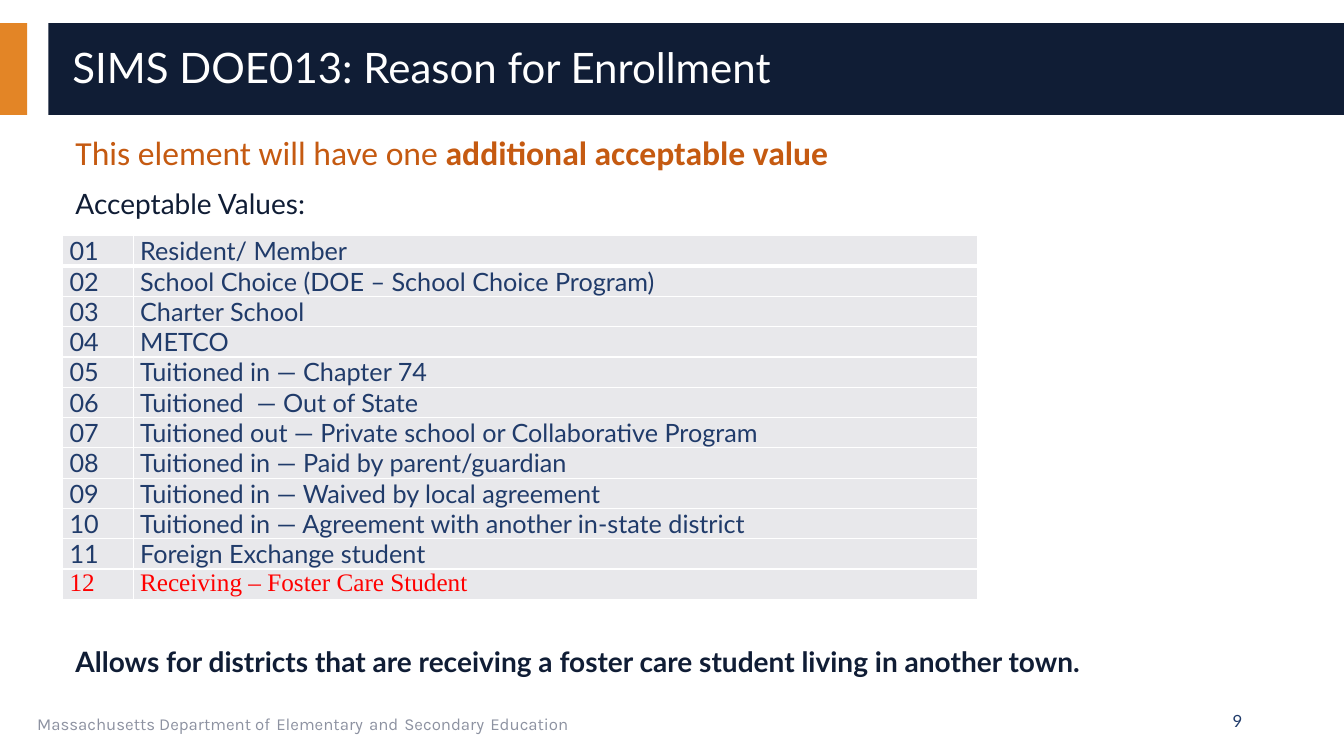
from dataclasses import dataclass

from lxml import etree
from pptx import Presentation
from pptx.dml.color import RGBColor
from pptx.enum.shapes import MSO_SHAPE
from pptx.enum.text import MSO_ANCHOR, PP_ALIGN
from pptx.oxml.ns import qn
from pptx.util import Inches, Pt

RECTANGLE = MSO_SHAPE.RECTANGLE
TOP, MIDDLE = MSO_ANCHOR.TOP, MSO_ANCHOR.MIDDLE
LEFT, RIGHT = PP_ALIGN.LEFT, PP_ALIGN.RIGHT


@dataclass(frozen=True)
class Theme:
    """Colours, fonts and type styles of the deck."""
    navy = "101D35"
    blue = "203B6A"
    amber = "E38526"
    white = "FFFFFF"
    cell = "E8E8EB"
    title = {"name": "Lato", "size": 30, "color": white}
    lead = {"name": "Calibri", "size": 24, "color": "C55A11"}
    body = {"name": "Lato", "size": 20, "color": navy}
    value = {"name": "Lato", "size": 18, "color": blue}
    added = {"name": "Times New Roman", "size": 18, "color": "FF0000"}
    footer = {"name": "Karla", "size": 12, "color": "8D92A1"}
    footer_gap = {"name": "Karla", "size": 18, "color": blue}
    number = {"name": "Lato", "size": 12, "color": blue}


@dataclass(frozen=True)
class Box:
    """A rectangle in inches."""
    left: float
    top: float
    width: float
    height: float

    def emu(self):
        """Return the four lengths as slide units."""
        return [Inches(n) for n in (self.left, self.top, self.width, self.height)]


THEME = Theme()
PAGE = Box(0, 0, 13.33, 7.5)
ROW_HEIGHT, LAST_ROW_HEIGHT = 0.3, 0.28
VALUES = [
    "Resident/ Member",
    "School Choice (DOE – School Choice Program)",
    "Charter School",
    "METCO",
    "Tuitioned in — Chapter 74",
    "Tuitioned  — Out of State",
    "Tuitioned out — Private school or Collaborative Program",
    "Tuitioned in — Paid by parent/guardian",
    "Tuitioned in — Waived by local agreement",
    "Tuitioned in — Agreement with another in-state district",
    "Foreign Exchange student",
    "Receiving – Foster Care Student",
]


def add_span(para, text, style):
    """Add one styled run to a paragraph."""
    span = para.add_run()
    span.text = text
    for key, value in style.items():
        if key == "color":
            span.font.color.rgb = RGBColor.from_string(value)
        else:
            setattr(span.font, key, Pt(value) if key == "size" else value)


def add_text(page, box, paras, anchor=TOP, **layout):
    """Add a wrapped text box; each paragraph is a list of (text, style)."""
    frame = page.shapes.add_textbox(*box.emu()).text_frame
    frame.word_wrap = True
    frame.vertical_anchor = anchor
    for index, spans in enumerate(paras):
        para = frame.add_paragraph() if index else frame.paragraphs[0]
        if index:
            para.space_before = Pt(10)
        for key, value in layout.items():
            setattr(para, key, value)
        for text, style in spans:
            add_span(para, text, style)


def add_bar(page, box, color):
    """Add a plain filled rectangle."""
    bar = page.shapes.add_shape(RECTANGLE, *box.emu())
    bar.shadow.inherit = False
    bar.fill.solid()
    bar.fill.fore_color.rgb = RGBColor.from_string(color)
    bar.line.fill.background()


def draw_header(page, box):
    """Draw the accent block, the title band and the title."""
    band_left = 0.48
    add_bar(page, Box(box.left, box.top, 0.27, box.height), THEME.amber)
    add_bar(page, Box(band_left, box.top, box.width - band_left, box.height), THEME.navy)
    title_box = Box(box.left + 0.62, box.top + 0.09, 12.44, box.height - 0.17)
    add_text(page, title_box, [[("SIMS DOE013: Reason for Enrollment", THEME.title)]],
             MIDDLE, line_spacing=0.9)


def draw_message(page, box):
    """Draw the lead lines at the top of the box and the note at its foot."""
    lead = [("This element will have one ", THEME.lead),
            ("additional acceptable value", {**THEME.lead, "bold": True})]
    add_text(page, Box(box.left, box.top, box.width, 1),
             [lead, [("Acceptable Values:", THEME.body)]])
    note = ("Allows for districts that are receiving a foster care student "
            "living in another town.")
    add_text(page, Box(box.left, box.top + box.height - 0.43, box.width, 0.43),
             [[(note, {**THEME.body, "bold": True})]])


def add_borders(cell, widths):
    """Give a cell white borders with the given widths in points."""
    properties = cell._tc.get_or_add_tcPr()
    for side, width in widths.items():
        line = etree.SubElement(properties, qn(f"a:ln{side}"), w=str(Pt(width)))
        fill = etree.SubElement(line, qn("a:solidFill"))
        etree.SubElement(fill, qn("a:srgbClr"), val=THEME.white)


def draw_values(page, box):
    """Draw the table of codes and values, the last one highlighted."""
    table = page.shapes.add_table(len(VALUES), 2, *box.emu()).table
    table.first_row = table.horz_banding = False
    code_width = 0.7
    for column, width in zip(table.columns, (code_width, box.width - code_width)):
        column.width = Inches(width)
    last = len(VALUES) - 1
    for index, value in enumerate(VALUES):
        table.rows[index].height = Inches(LAST_ROW_HEIGHT if index == last else ROW_HEIGHT)
        style = THEME.added if index == last else THEME.value
        widths = {"L": 1, "R": 1, "T": 3 if index == 1 else 1, "B": 1 if index else 3}
        for cell, text in zip(table.rows[index].cells, (f"{index + 1:02}", value)):
            cell.margin_left = cell.margin_right = Inches(0.07)
            cell.margin_top = cell.margin_bottom = 0
            add_borders(cell, widths)
            cell.fill.solid()
            cell.fill.fore_color.rgb = RGBColor.from_string(THEME.cell)
            add_span(cell.text_frame.paragraphs[0], text, style)


def draw_footer(page, box):
    """Draw the department name at the left and the page number at the right."""
    spans = [("Massachusetts Department of", THEME.footer)]
    for word in ("Elementary", "and", "Secondary", "Education"):
        spans += [(" ", THEME.footer_gap), (word, THEME.footer)]
    add_text(page, Box(box.left, box.top, 8.44, box.height), [spans])
    number_width = 3
    number_box = Box(box.left + box.width - number_width, box.top, number_width, box.height)
    add_text(page, number_box, [[("9", THEME.number)]], MIDDLE, alignment=RIGHT)


def main():
    """Build and save the deck."""
    deck = Presentation()
    deck.slide_width, deck.slide_height = Inches(PAGE.width), Inches(PAGE.height)
    page = deck.slides.add_slide(deck.slide_layouts[6])
    draw_header(page, Box(0, 0.23, PAGE.width, 0.91))
    draw_footer(page, Box(0.27, 6.95, 12.15, 0.4))
    draw_message(page, Box(0.65, 1.26, 12.44, 5.51))
    table_height = ROW_HEIGHT * (len(VALUES) - 1) + LAST_ROW_HEIGHT
    draw_values(page, Box(0.62, 2.34, 9.08, table_height))
    deck.save("out.pptx")


if __name__ == "__main__":
    main()
